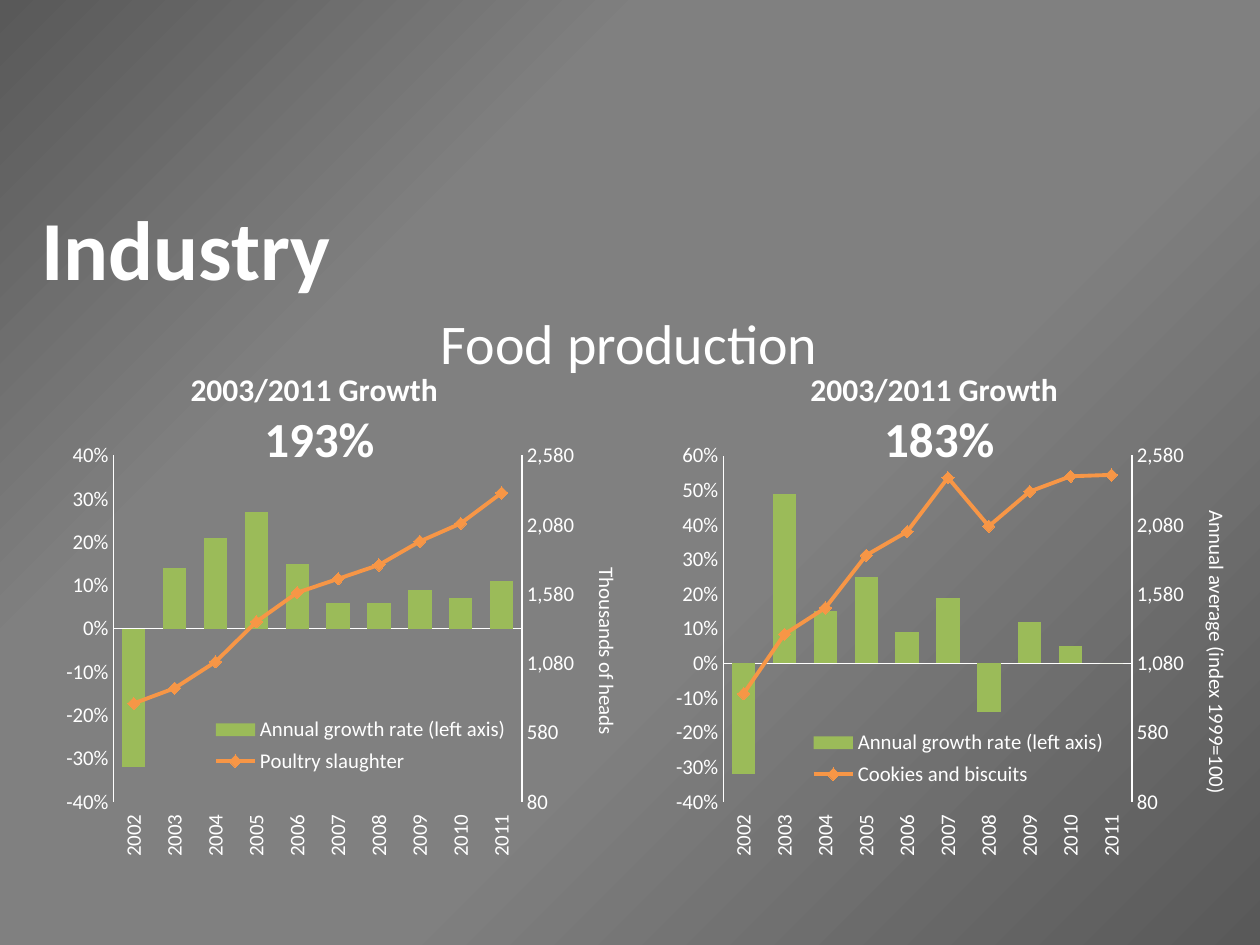
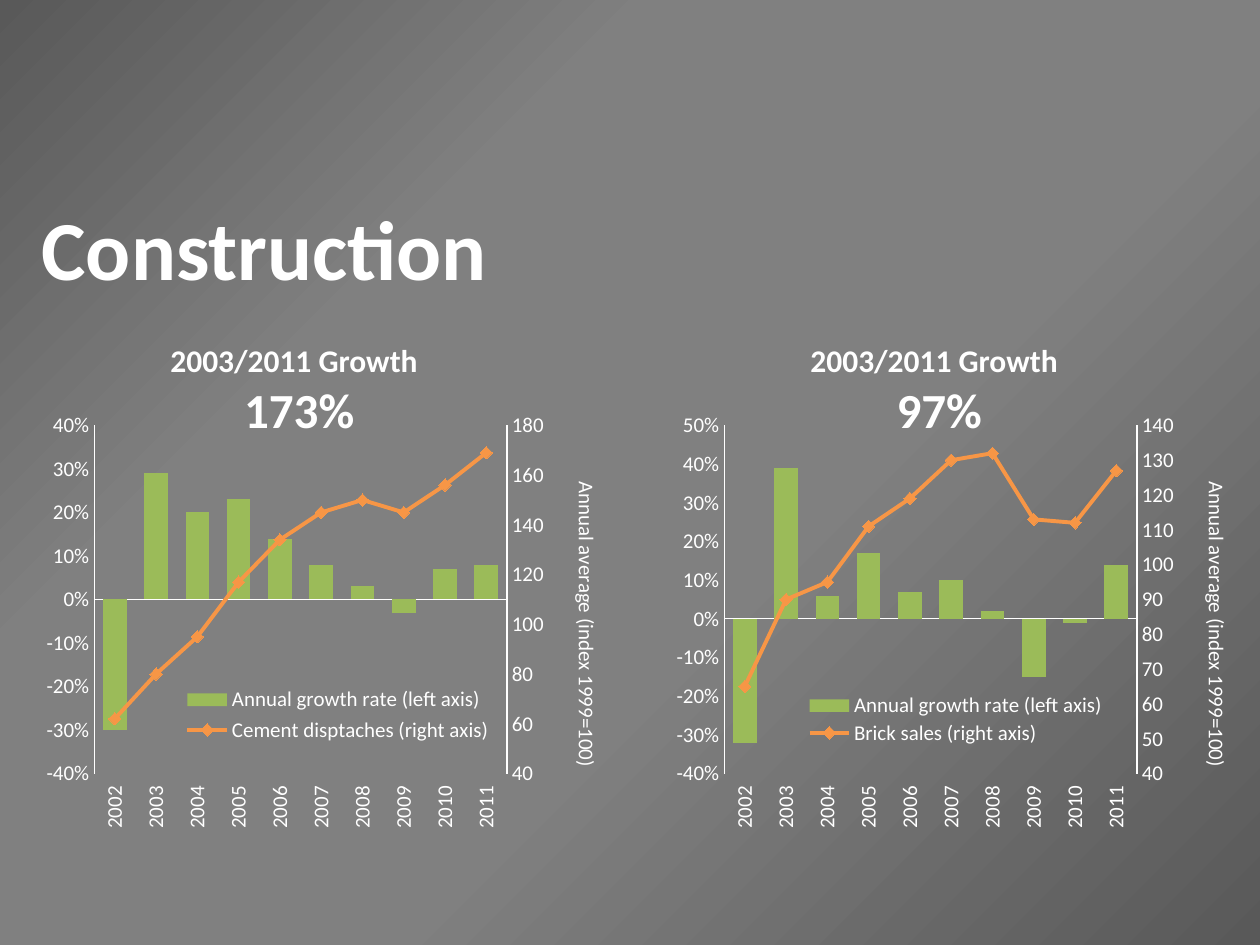
"""Build two slides that pair annual growth columns with production level lines."""
from copy import deepcopy
from dataclasses import dataclass
from typing import Any

from pptx import Presentation
from pptx.chart.axis import ValueAxis
from pptx.chart.data import CategoryChartData
from pptx.dml.color import RGBColor
from pptx.enum.chart import XL_CHART_TYPE as ChartType
from pptx.enum.chart import XL_LEGEND_POSITION as LegendPosition
from pptx.enum.chart import XL_MARKER_STYLE as MarkerStyle
from pptx.enum.chart import XL_TICK_LABEL_POSITION as LabelPosition
from pptx.enum.chart import XL_TICK_MARK as TickMark
from pptx.enum.text import MSO_ANCHOR as Anchor
from pptx.enum.text import MSO_AUTO_SIZE as AutoSize
from pptx.enum.text import PP_ALIGN as Align
from pptx.oxml import parse_xml
from pptx.oxml.ns import nsdecls
from pptx.util import Inches, Pt


@dataclass(frozen=True)
class Theme:
    font: str = "Calibri"
    text: RGBColor = RGBColor(0xFF, 0xFF, 0xFF)
    growth: RGBColor = RGBColor(0x9B, 0xBB, 0x59)
    level: RGBColor = RGBColor(0xF7, 0x96, 0x46)
    backdrop: tuple = ((0, "595959"), (40, "808080"), (70, "808080"), (100, "595959"))
    title_size: int = 48
    subtitle_size: int = 32
    caption_size: int = 18
    total_size: int = 28
    chart_size: int = 12


@dataclass(frozen=True)
class Scale:
    title: str
    low: float
    high: float
    step: float
    title_x: float
    title_y: float


@dataclass(frozen=True)
class Panel:
    left: float
    caption_left: float
    total: str
    growth: tuple
    level_name: str
    level: tuple
    growth_scale: Scale
    level_scale: Scale
    legend: tuple


@dataclass(frozen=True)
class Topic:
    title: str
    subtitle: str
    chart_top: float
    chart_height: float
    caption_top: float
    panels: tuple


THEME = Theme()
YEARS = [str(year) for year in range(2002, 2012)]
GROWTH_NAME = "Annual growth rate (left axis)"
CHART_WIDTH = 4.8
PLOT_BOX = (0.156, 0.051, 0.684, 0.799)
INDEX_TITLE = "Annual average (index 1999=100)"


def growth_scale(high: float) -> Scale:
    return Scale("Annual growth rate", -0.4, high, 0.1, 0.02, 0.305)


TOPICS = (
    Topic("Industry", "Food production", 3.44, 3.44, 2.89, (
        Panel(0.16, 1.41, "193%",
              (-0.32, 0.14, 0.21, 0.27, 0.15, 0.06, 0.06, 0.09, 0.07, 0.11),
              "Poultry slaughter",
              (790, 900, 1090, 1380, 1590, 1690, 1790, 1960, 2090, 2310),
              growth_scale(0.4), Scale("Thousands of heads", 80, 2580, 500, 0.95, 0.3),
              (0.3, 0.64, 0.54, 0.16)),
        Panel(5, 6.33, "183%",
              (-0.32, 0.49, 0.15, 0.25, 0.09, 0.19, -0.14, 0.12, 0.05, 0),
              "Cookies and biscuits",
              (860, 1290, 1480, 1860, 2030, 2420, 2070, 2320, 2430, 2440),
              growth_scale(0.6), Scale(INDEX_TITLE, 80, 2580, 500, 0.95, 0.17),
              (0.28, 0.67, 0.54, 0.16)),
    )),
    Topic("Construction", "", 3.2, 3.46, 2.66, (
        Panel(0, 1.25, "173%",
              (-0.3, 0.29, 0.2, 0.23, 0.14, 0.08, 0.03, -0.03, 0.07, 0.08),
              "Cement disptaches (right axis)",
              (62, 80, 95, 117, 134, 145, 150, 145, 156, 169),
              growth_scale(0.4), Scale(INDEX_TITLE, 40, 180, 20, 0.94, 0.17),
              (0.29, 0.64, 0.54, 0.15)),
        Panel(5, 6.33, "97%",
              (-0.32, 0.39, 0.06, 0.17, 0.07, 0.1, 0.02, -0.15, -0.01, 0.14),
              "Brick sales (right axis)",
              (65, 90, 95, 111, 119, 130, 132, 113, 112, 127),
              growth_scale(0.5), Scale(INDEX_TITLE, 40, 140, 10, 0.94, 0.17),
              (0.27, 0.66, 0.54, 0.13)),
    )),
)


def assign(target: Any, **values: Any) -> None:
    for key, value in values.items():
        setattr(target, key, value)


def style_font(font: Any, size: int, bold: bool = False) -> None:
    assign(font, name=THEME.font, size=Pt(size), bold=bold)
    font.color.rgb = THEME.text


def paint_backdrop(master: Any) -> None:
    fill = master.background.fill
    fill.solid()
    stops = "".join(f'<a:gs pos="{position * 1000}"><a:srgbClr val="{shade}"/></a:gs>'
                    for position, shade in THEME.backdrop)
    gradient = parse_xml(
        f'<a:gradFill {nsdecls("a")} rotWithShape="1"><a:gsLst>{stops}</a:gsLst>'
        '<a:path path="circle"><a:fillToRect l="100000" t="100000"/></a:path></a:gradFill>')
    solid = master.element.xpath("p:cSld/p:bg/p:bgPr/a:solidFill")[0]
    solid.getparent().replace(solid, gradient)


def set_layout(parent: Any, index: int, place: tuple, inner: bool = False) -> None:
    for previous in parent.xpath("c:layout"):
        parent.remove(previous)
    target = '<c:layoutTarget val="inner"/>' if inner else ""
    modes = "".join(f'<c:{axis}Mode val="edge"/>' for axis in "xy")
    sizes = "".join(f'<c:{key} val="{value}"/>' for key, value in zip("xywh", place))
    parent.insert(index, parse_xml(
        f'<c:layout {nsdecls("c")}><c:manualLayout>{target}{modes}{sizes}'
        "</c:manualLayout></c:layout>"))


def style_axis(axis: Any) -> None:
    assign(axis, has_major_gridlines=False, major_tick_mark=TickMark.NONE,
           minor_tick_mark=TickMark.NONE)
    axis.format.line.color.rgb = THEME.text
    axis.format.line.width = Pt(0.75)
    style_font(axis.tick_labels.font, THEME.chart_size)


def set_scale(axis: ValueAxis, scale: Scale, number_format: str, turn: int) -> None:
    assign(axis, minimum_scale=scale.low, maximum_scale=scale.high, major_unit=scale.step)
    assign(axis.tick_labels, number_format=number_format, number_format_is_linked=False)
    frame = axis.axis_title.text_frame
    frame.text = scale.title
    style_font(frame.paragraphs[0].runs[0].font, THEME.chart_size)
    heading = axis._element.xpath("c:title")[0]
    heading.xpath("c:tx/c:rich/a:bodyPr")[0].set("rot", str(turn * 60000))
    set_layout(heading, 1, (scale.title_x, scale.title_y))


def split_level_line(chart: Any) -> ValueAxis:
    """Move the second series to a line on its own right-hand axis."""
    columns = chart.plots[0]._element
    series = columns.xpath("c:ser")[1]
    for flag in series.xpath("c:invertIfNegative"):
        series.remove(flag)
    line = parse_xml(
        f'<c:lineChart {nsdecls("c")}><c:grouping val="standard"/><c:varyColors val="0"/>'
        '<c:marker val="1"/><c:axId val="5001"/><c:axId val="5002"/></c:lineChart>')
    line.insert(2, series)
    columns.addnext(line)
    left = chart.value_axis._element
    right, years = deepcopy(left), deepcopy(chart.category_axis._element)
    for element, own, other in ((years, "5001", "5002"), (right, "5002", "5001")):
        element.xpath("c:axId")[0].set("val", own)
        element.xpath("c:crossAx")[0].set("val", other)
    years.xpath("c:delete")[0].set("val", "1")
    right.xpath("c:axPos")[0].set("val", "r")
    right.xpath("c:crosses")[0].set("val", "max")
    left.addnext(right)
    right.addnext(years)
    return ValueAxis(right)


def add_growth_chart(slide: Any, topic: Topic, panel: Panel) -> None:
    data = CategoryChartData()
    data.categories = YEARS
    data.add_series(GROWTH_NAME, panel.growth, "0%")
    data.add_series(panel.level_name, panel.level, "#,##0")
    chart = slide.shapes.add_chart(
        ChartType.COLUMN_CLUSTERED, Inches(panel.left), Inches(topic.chart_top),
        Inches(CHART_WIDTH), Inches(topic.chart_height), data).chart
    assign(chart, has_title=False, has_legend=True)
    style_font(chart.font, THEME.chart_size)
    assign(chart.legend, position=LegendPosition.RIGHT, include_in_layout=False)
    style_font(chart.legend.font, THEME.chart_size)
    set_layout(chart.legend._element, 1, panel.legend)

    for axis in (chart.category_axis, chart.value_axis):
        style_axis(axis)
    years = chart.category_axis
    years.tick_label_position = LabelPosition.LOW
    years._element.xpath("c:txPr/a:bodyPr")[0].set("rot", str(-90 * 60000))
    right_axis = split_level_line(chart)
    set_scale(chart.value_axis, panel.growth_scale, "0%", -90)
    set_scale(right_axis, panel.level_scale, "#,##0", 90)

    columns, line = chart.plots
    assign(columns, gap_width=75, vary_by_categories=False)
    growth = columns.series[0]
    growth.invert_if_negative = False
    growth.format.fill.solid()
    growth.format.fill.fore_color.rgb = THEME.growth
    level = line.series[0]
    level.smooth = False
    level.format.line.color.rgb = THEME.level
    level.format.line.width = Pt(2.25)
    assign(level.marker, style=MarkerStyle.DIAMOND, size=7)
    level.marker.format.fill.solid()
    level.marker.format.fill.fore_color.rgb = THEME.level
    level.marker.format.line.color.rgb = THEME.level
    set_layout(columns._element.getparent(), 0, PLOT_BOX, inner=True)


def add_caption(slide: Any, topic: Topic, panel: Panel) -> None:
    frame = slide.shapes.add_textbox(
        Inches(panel.caption_left), Inches(topic.caption_top),
        Inches(2.17), Inches(0.87)).text_frame
    assign(frame, word_wrap=False, text=f"2003/2011 Growth\n{panel.total}")
    for paragraph, size in zip(frame.paragraphs, (THEME.caption_size, THEME.total_size)):
        paragraph.alignment = Align.CENTER
        style_font(paragraph.runs[0].font, size, bold=True)
    frame.paragraphs[1]._p.get_or_add_pPr().set("marL", str(Inches(0.08)))


def add_headings(slide: Any, topic: Topic) -> None:
    title = slide.shapes.title
    assign(title, left=Inches(0.23), top=Inches(1.51), width=Inches(9.53), height=Inches(0.9))
    assign(title.text_frame, text=topic.title, vertical_anchor=Anchor.TOP,
           auto_size=AutoSize.NONE)
    heading = title.text_frame.paragraphs[0]
    heading.alignment = Align.LEFT
    style_font(heading.runs[0].font, THEME.title_size, bold=True)
    if topic.subtitle:
        frame = slide.shapes.add_textbox(
            Inches(0.23), Inches(2.4), Inches(9.53), Inches(0.64)).text_frame
        assign(frame, word_wrap=True, text=topic.subtitle)
        frame.paragraphs[0].alignment = Align.CENTER
        style_font(frame.paragraphs[0].runs[0].font, THEME.subtitle_size)


def main() -> None:
    deck = Presentation()
    assign(deck, slide_width=Inches(10), slide_height=Inches(7.5))
    paint_backdrop(deck.slide_master)
    title_only = deck.slide_layouts.get_by_name("Title Only")
    for topic in TOPICS:
        slide = deck.slides.add_slide(title_only)
        add_headings(slide, topic)
        for draw in (add_growth_chart, add_caption):
            for panel in topic.panels:
                draw(slide, topic, panel)
    deck.save("out.pptx")


if __name__ == "__main__":
    main()
